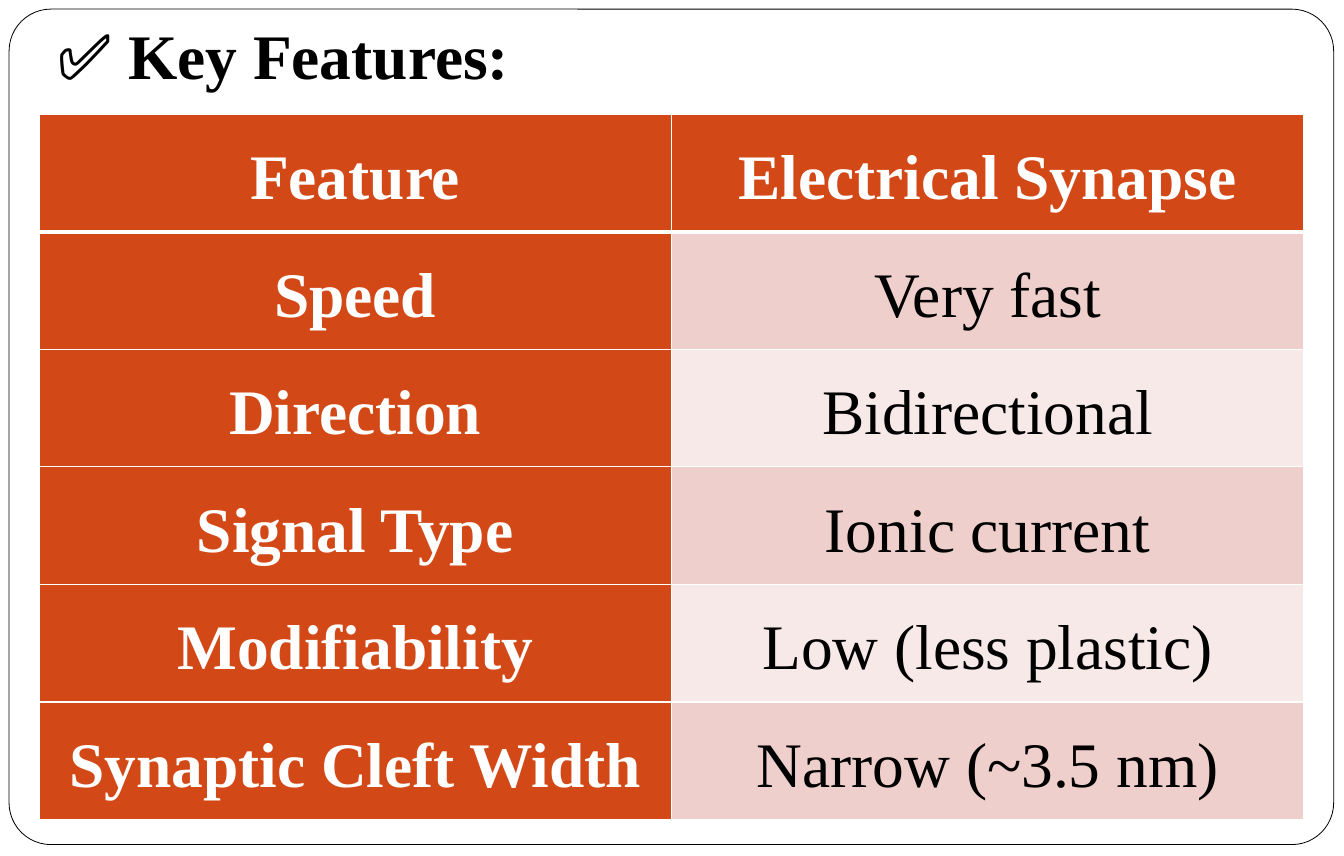
from dataclasses import dataclass

from lxml import etree
from pptx import Presentation
from pptx.dml.color import RGBColor
from pptx.enum.shapes import MSO_SHAPE
from pptx.enum.text import MSO_ANCHOR, MSO_AUTO_SIZE, PP_ALIGN
from pptx.oxml.ns import qn
from pptx.util import Pt

ROUNDED = MSO_SHAPE.ROUNDED_RECTANGLE
LEFT, CENTER = PP_ALIGN.LEFT, PP_ALIGN.CENTER
MIDDLE, BOTTOM = MSO_ANCHOR.MIDDLE, MSO_ANCHOR.BOTTOM
NO_AUTOFIT = MSO_AUTO_SIZE.NONE

# Content
TITLE = "✅ Key Features:"
FEATURES = [
    ("Feature", "Electrical Synapse"),
    ("Speed", "Very fast"),
    ("Direction", "Bidirectional"),
    ("Signal Type", "Ionic current"),
    ("Modifiability", "Low (less plastic)"),
    ("Synaptic Cleft Width", "Narrow (~3.5 nm)"),
]

# Layout in px, 100 px to the inch
PX = 9144
SLIDE_SIZE = (1177, 750)
FRAME_BOX = (8, 8, 1160, 732)
TITLE_BOX = (40, 8, 1060, 83)
TABLE_ORIGIN = (34, 100)
COLUMN_WIDTH, ROW_HEIGHT = 554, 103
TITLE_INSETS = (10, 5, 10, 10)
CELL_INSETS = (1, 1, 1, 1)


@dataclass(frozen=True)
class Theme:
    font: str = "Times New Roman"
    size: int = 40
    white: str = "FFFFFF"
    black: str = "000000"
    accent: str = "D34817"
    bands: tuple = ("EFCFCC", "F7E9E8")
    thin: int = 1
    thick: int = 3


THEME = Theme()


def px(*lengths):
    return [length * PX for length in lengths]


def set_insets(target, insets):
    (target.margin_left, target.margin_top,
     target.margin_right, target.margin_bottom) = px(*insets)


def write_text(text_frame, text, color=THEME.black, bold=False, align=LEFT,
               line_spacing=1.0, space_after=0):
    paragraph = text_frame.paragraphs[0]
    paragraph.alignment = align
    paragraph.line_spacing = line_spacing
    paragraph.space_before = Pt(0)
    paragraph.space_after = Pt(space_after)
    run = paragraph.add_run()
    run.text = text
    run.font.name = THEME.font
    run.font.size = Pt(THEME.size)
    run.font.bold = bold
    run.font.color.rgb = RGBColor.from_string(color)


def set_borders(cell, **widths):
    properties = cell._tc.get_or_add_tcPr()
    for index, side in enumerate("LRTB"):
        width = Pt(widths.get(side, THEME.thin))
        line = etree.Element(qn(f"a:ln{side}"), w=str(int(width)))
        fill = etree.SubElement(line, qn("a:solidFill"))
        etree.SubElement(fill, qn("a:srgbClr"), val=THEME.white)
        properties.insert(index, line)


def add_frame(slide):
    frame = slide.shapes.add_shape(ROUNDED, *px(*FRAME_BOX))
    frame.adjustments[0] = 0.05
    frame.shadow.inherit = False
    frame.fill.solid()
    frame.fill.fore_color.rgb = RGBColor.from_string(THEME.white)
    frame.line.color.rgb = RGBColor.from_string(THEME.black)
    frame.line.width = Pt(0.5)


def add_title(slide):
    title = slide.shapes.title
    title.left, title.top, title.width, title.height = px(*TITLE_BOX)
    text_frame = title.text_frame
    text_frame.word_wrap = True
    text_frame.auto_size = NO_AUTOFIT
    text_frame.vertical_anchor = BOTTOM
    set_insets(text_frame, TITLE_INSETS)
    write_text(text_frame, TITLE, bold=True)
    # Bring the title in front of the frame
    title.element.getparent().append(title.element)


def add_feature_table(slide):
    row_count, column_count = len(FEATURES), len(FEATURES[0])
    size = (COLUMN_WIDTH * column_count, ROW_HEIGHT * row_count)
    table = slide.shapes.add_table(
        row_count, column_count, *px(*TABLE_ORIGIN, *size)).table
    table.first_col = True
    for row, texts in enumerate(FEATURES):
        for column, text in enumerate(texts):
            cell = table.cell(row, column)
            heading = row == 0 or column == 0
            fill = THEME.accent if heading else THEME.bands[(row - 1) % 2]
            cell.fill.solid()
            cell.fill.fore_color.rgb = RGBColor.from_string(fill)
            cell.vertical_anchor = MIDDLE
            set_insets(cell, CELL_INSETS)
            set_borders(cell,
                        T=THEME.thick if row == 1 else THEME.thin,
                        B=THEME.thick if row == 0 else THEME.thin)
            write_text(cell.text_frame, text, bold=heading, align=CENTER,
                       color=THEME.white if heading else THEME.black,
                       line_spacing=1.15, space_after=8)


def main():
    presentation = Presentation()
    presentation.slide_width, presentation.slide_height = px(*SLIDE_SIZE)
    title_only = presentation.slide_layouts[5]
    slide = presentation.slides.add_slide(title_only)
    add_frame(slide)
    add_title(slide)
    add_feature_table(slide)
    presentation.save("out.pptx")


if __name__ == "__main__":
    main()
